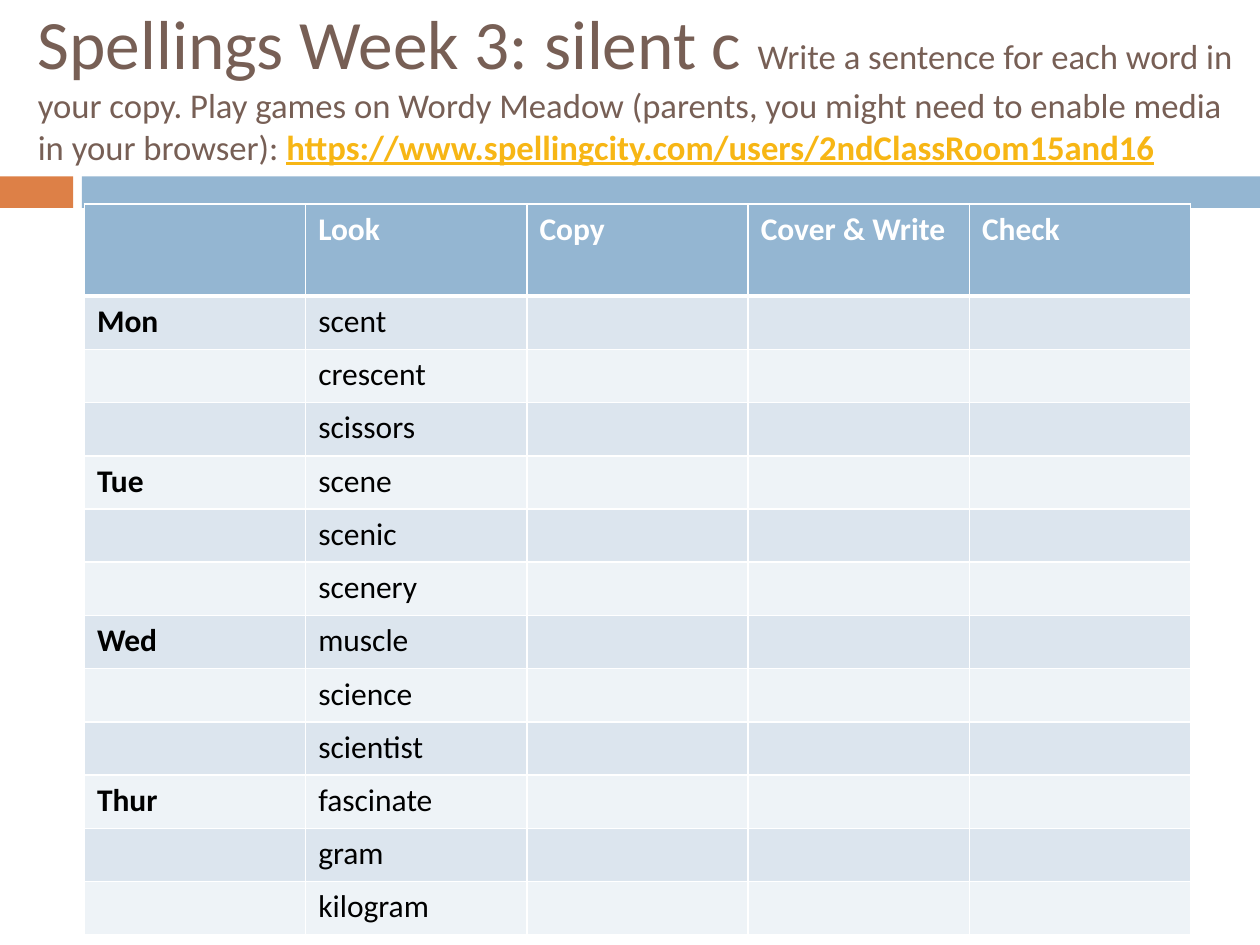
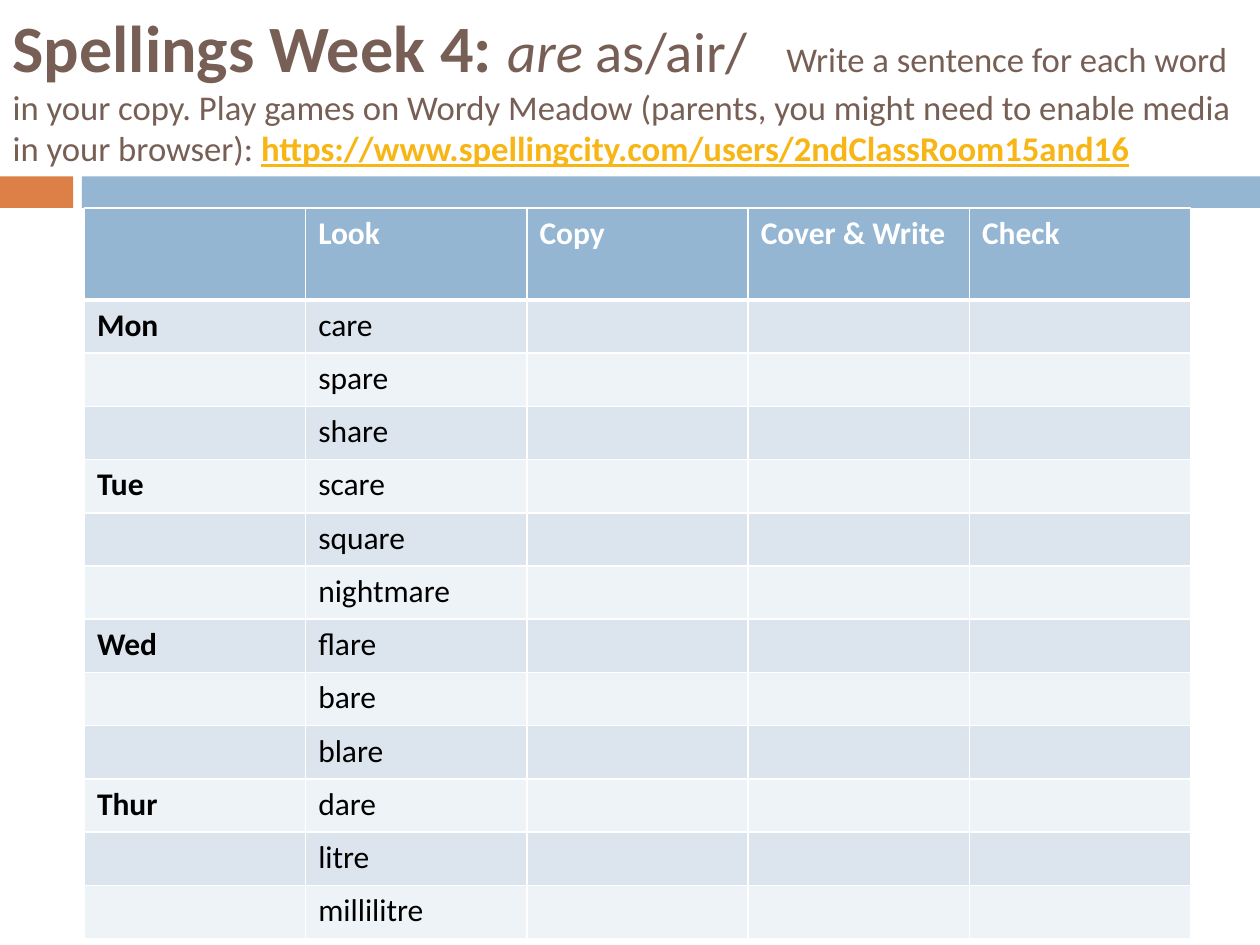
from dataclasses import dataclass

from lxml.etree import SubElement
from pptx import Presentation
from pptx.dml.color import RGBColor
from pptx.enum.shapes import MSO_SHAPE
from pptx.enum.text import MSO_ANCHOR, MSO_AUTO_SIZE, PP_ALIGN
from pptx.oxml.ns import qn
from pptx.util import Inches, Pt


@dataclass(frozen=True)
class Theme:
    font: str = "Calibri"
    brown: str = "775F55"
    orange: str = "DD8047"
    blue: str = "94B6D2"
    gold: str = "F7B615"
    white: str = "FFFFFF"
    black: str = "000000"
    stripes: tuple = ("DCE5EE", "EEF3F7")
    heading_size: float = 39.6
    bold_heading_size: float = 37.8
    sound_size: float = 32.4
    note_size: float = 19.8
    table_size: float = 18
    thin_rule: float = 1
    thick_rule: float = 3


THEME = Theme()
SLIDE_WIDTH, SLIDE_HEIGHT = 10, 7.5

# Bands under the title: left, width, colour
BAND_TOP, BAND_HEIGHT = 1.4, 0.25
BANDS = [(0, 0.58, THEME.orange), (0.65, 9.35, THEME.blue)]

# Spelling grid
GRID_LEFT, GRID_WIDTH, GRID_HEIGHT = 0.67, 8.78, 5.8
HEADER_HEIGHT = 0.73
HEADINGS = ["", "Look", "Copy", "Cover & Write", "Check"]
DAYS = ["Mon", "Tue", "Wed", "Thur"]
WORDS_PER_DAY = 3

NOTE = [
    ("Write a sentence for each word in your copy. Play games on Wordy Meadow "
     "(parents, you might need to enable media in your browser): ",
     dict(size=THEME.note_size)),
    ("https://www.spellingcity.com/users/2ndClassRoom15and16",
     dict(size=THEME.note_size, color=THEME.gold, bold=True, underline=True)),
]

WEEKS = [
    dict(
        heading=[("Spellings Week 3: silent c ", dict(size=THEME.heading_size))],
        title_box=(0.2, 0, 9.8, 1.33),
        note_tab=None,
        grid_top=1.62,
        words=["scent", "crescent", "scissors", "scene", "scenic", "scenery",
               "muscle", "science", "scientist", "fascinate", "gram", "kilogram"],
    ),
    dict(
        heading=[
            ("Spellings Week 4: ", dict(size=THEME.bold_heading_size, bold=True)),
            ("are", dict(size=THEME.sound_size, italic=True)),
            (" as/air/\t", dict(size=THEME.sound_size)),
        ],
        title_box=(0, -0.08, 10, 1.55),
        note_tab=6.14,
        grid_top=1.65,
        words=["care", "spare", "share", "scare", "square", "nightmare",
               "flare", "bare", "blare", "dare", "litre", "millilitre"],
    ),
]


def write(paragraph, text, size=THEME.table_size, color=THEME.brown,
          bold=False, italic=False, underline=False):
    run = paragraph.add_run()
    run.text = text
    font = run.font
    font.name, font.size = THEME.font, Pt(size)
    font.bold, font.italic, font.underline = bold, italic, underline
    font.color.rgb = RGBColor.from_string(color)


def add_tab_stop(paragraph, position):
    tabs = SubElement(paragraph._p.get_or_add_pPr(), qn("a:tabLst"))
    SubElement(tabs, qn("a:tab"), pos=str(Inches(position)), algn="l")


def fill_title(title, box, heading, note_tab):
    title.left, title.top, title.width, title.height = map(Inches, box)
    frame = title.text_frame
    frame.word_wrap = True
    frame.auto_size = MSO_AUTO_SIZE.NONE
    frame.vertical_anchor = MSO_ANCHOR.MIDDLE
    paragraph = frame.paragraphs[0]
    paragraph.alignment = PP_ALIGN.LEFT
    if note_tab:
        add_tab_stop(paragraph, note_tab)
    for text, style in heading + NOTE:
        write(paragraph, text, **style)


def add_bands(slide):
    for left, width, color in BANDS:
        band = slide.shapes.add_shape(
            MSO_SHAPE.RECTANGLE, Inches(left), Inches(BAND_TOP),
            Inches(width), Inches(BAND_HEIGHT))
        band.shadow.inherit = False
        band.fill.solid()
        band.fill.fore_color.rgb = RGBColor.from_string(color)
        band.line.fill.background()
        # Keep the bands behind the title
        slide.shapes.title._element.addprevious(band._element)


def rule_cell(cell, top, bottom):
    """Draw white rules round a cell; call before filling it."""
    properties = cell._tc.get_or_add_tcPr()
    widths = dict(lnL=THEME.thin_rule, lnR=THEME.thin_rule, lnT=top, lnB=bottom)
    for side, width in widths.items():
        rule = SubElement(properties, qn(f"a:{side}"), w=str(Pt(width)))
        SubElement(SubElement(rule, qn("a:solidFill")), qn("a:srgbClr"),
                   val=THEME.white)


def fill_cell(cell, text, row, column):
    is_header = row == 0
    rule_cell(cell,
              top=THEME.thick_rule if row == 1 else THEME.thin_rule,
              bottom=THEME.thick_rule if is_header else THEME.thin_rule)
    cell.fill.solid()
    cell.fill.fore_color.rgb = RGBColor.from_string(
        THEME.blue if is_header else THEME.stripes[(row - 1) % 2])
    if text:
        write(cell.text_frame.paragraphs[0], text,
              color=THEME.white if is_header else THEME.black,
              bold=is_header or column == 0)


def add_spelling_grid(slide, top, words):
    rows = [HEADINGS]
    for index, word in enumerate(words):
        day, place = divmod(index, WORDS_PER_DAY)
        rows.append([DAYS[day] if place == 0 else "", word, "", "", ""])

    grid = slide.shapes.add_table(
        len(rows), len(HEADINGS), Inches(GRID_LEFT), Inches(top),
        Inches(GRID_WIDTH), Inches(GRID_HEIGHT)).table
    for column in grid.columns:
        column.width = Inches(GRID_WIDTH / len(HEADINGS))
    word_height = (GRID_HEIGHT - HEADER_HEIGHT) / len(words)
    for r, texts in enumerate(rows):
        grid.rows[r].height = Inches(word_height if r else HEADER_HEIGHT)
        for c, text in enumerate(texts):
            fill_cell(grid.cell(r, c), text, r, c)


def main():
    deck = Presentation()
    deck.slide_width, deck.slide_height = Inches(SLIDE_WIDTH), Inches(SLIDE_HEIGHT)
    title_only = deck.slide_layouts[5]
    for week in WEEKS:
        slide = deck.slides.add_slide(title_only)
        add_bands(slide)
        fill_title(slide.shapes.title, week["title_box"], week["heading"],
                   week["note_tab"])
        add_spelling_grid(slide, week["grid_top"], week["words"])
    deck.save("out.pptx")


if __name__ == "__main__":
    main()
